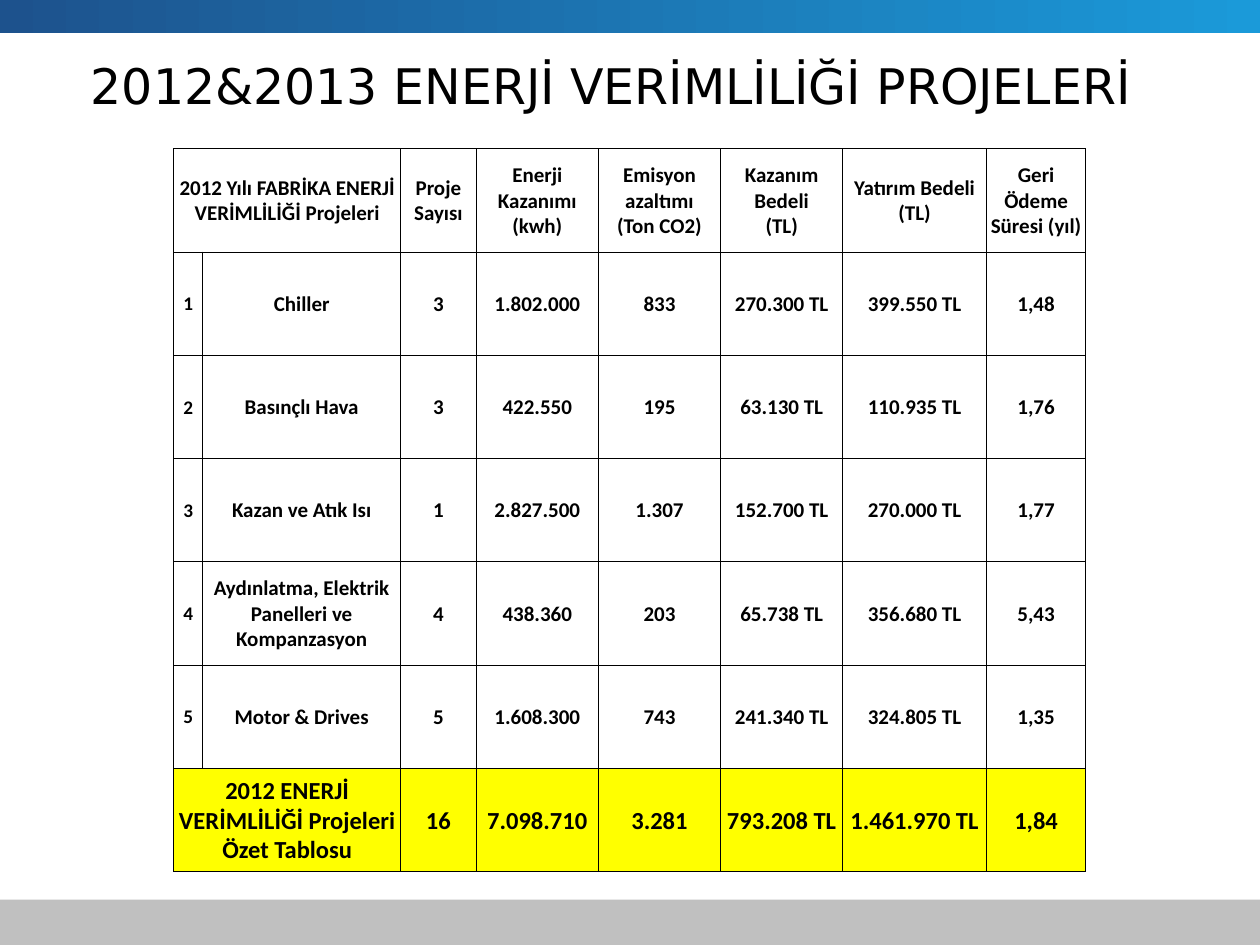
from lxml.etree import SubElement
from pptx import Presentation
from pptx.dml.color import RGBColor
from pptx.enum.shapes import MSO_SHAPE
from pptx.enum.text import MSO_ANCHOR, MSO_AUTO_SIZE, PP_ALIGN
from pptx.oxml.ns import qn
from pptx.util import Inches, Pt

TITLE = "2012&2013 ENERJİ VERİMLİLİĞİ PROJELERİ"
HEADER = ["2012 Yılı FABRİKA ENERJİ VERİMLİLİĞİ Projeleri", "", "Proje Sayısı",
          "Enerji Kazanımı (kwh)", "Emisyon\nazaltımı\n(Ton CO2)",
          "Kazanım\nBedeli\n(TL)", "Yatırım Bedeli\n(TL)",
          "Geri Ödeme Süresi (yıl)"]
PROJECTS = [
    ["1", "Chiller", "3", "1.802.000", "833", "270.300 TL", "399.550 TL", "1,48"],
    ["2", "Basınçlı Hava", "3", "422.550", "195", "63.130 TL", "110.935 TL", "1,76"],
    ["3", "Kazan ve Atık Isı", "1", "2.827.500", "1.307", "152.700 TL", "270.000 TL", "1,77"],
    ["4", "Aydınlatma, Elektrik Panelleri ve Kompanzasyon", "4", "438.360", "203",
     "65.738 TL", "356.680 TL", "5,43"],
    ["5", "Motor & Drives", "5", "1.608.300", "743", "241.340 TL", "324.805 TL", "1,35"],
]
TOTAL = ["2012 ENERJİ VERİMLİLİĞİ Projeleri Özet Tablosu", "", "16", "7.098.710",
         "3.281", "793.208 TL", "1.461.970 TL", "1,84"]
ROWS = [HEADER, *PROJECTS, TOTAL]
COL_WIDTHS = [0.23, 1.57, 0.6, 0.97, 0.97, 0.97, 1.14, 0.79]
ROW_HEIGHT = 0.82


def color(hex_value):
    return RGBColor.from_string(hex_value)


def add_run(p, text, size, font, bold=False):
    r = p.add_run()
    r.text = text
    r.font.size = Pt(size)
    r.font.name = font
    r.font.bold = bold
    r.font.color.rgb = color("000000")


def add_band(s, top, height):
    sp = s.shapes.add_shape(MSO_SHAPE.RECTANGLE, 0, Inches(top), Inches(10), Inches(height))
    sp.shadow.inherit = False
    sp.line.fill.background()
    return sp


def set_borders(cell, hex_value, width):
    tc_pr = cell._tc.get_or_add_tcPr()
    for side in ("lnL", "lnR", "lnT", "lnB"):
        ln = SubElement(tc_pr, qn(f"a:{side}"), w=str(Pt(width)))
        fill = SubElement(ln, qn("a:solidFill"))
        SubElement(fill, qn("a:srgbClr"), val=hex_value)


def format_cell(cell, text, size, fill):
    cell.margin_left = cell.margin_right = cell.margin_top = Inches(0.01)
    cell.margin_bottom = 0
    cell.vertical_anchor = MSO_ANCHOR.MIDDLE
    set_borders(cell, "000000", 0.5)
    if fill:
        cell.fill.solid()
        cell.fill.fore_color.rgb = color(fill)
    else:
        cell.fill.background()
    p = cell.text_frame.paragraphs[0]
    p.alignment = PP_ALIGN.CENTER
    if not text:
        return
    for i, line in enumerate(text.split("\n")):
        if i:
            p.add_line_break()
        add_run(p, line, size, "Calibri", bold=True)


prs = Presentation()
prs.slide_width, prs.slide_height = Inches(10), Inches(7.5)
s = prs.slides.add_slide(prs.slide_layouts[5])

footer = add_band(s, 7.14, 0.36)
footer.fill.solid()
footer.fill.fore_color.rgb = color("C0C0C0")
top_band = add_band(s, 0, 0.26)
top_band.fill.gradient()
top_band.fill.gradient_angle = 0
for stop, position, shade in zip(top_band.fill.gradient_stops, (0, 1), ("1D528D", "1B9AD9")):
    stop.position = position
    stop.color.rgb = color(shade)

title = s.shapes.title
title.left, title.top, title.width, title.height = map(Inches, (0.5, 0.35, 9.07, 0.64))
tf = title.text_frame
tf.auto_size = MSO_AUTO_SIZE.NONE
tf.vertical_anchor = MSO_ANCHOR.MIDDLE
tf.margin_left = Inches(0.22)
tf.paragraphs[0].alignment = PP_ALIGN.LEFT
add_run(tf.paragraphs[0], TITLE, 28, "DejaVu Sans")

table = s.shapes.add_table(
    len(ROWS), len(COL_WIDTHS), Inches(1.38), Inches(1.18),
    Inches(sum(COL_WIDTHS)), Inches(ROW_HEIGHT * len(ROWS))).table
table.first_row = table.horz_banding = False
for column, width in zip(table.columns, COL_WIDTHS):
    column.width = Inches(width)

last = len(ROWS) - 1
for i, values in enumerate(ROWS):
    table.rows[i].height = Inches(ROW_HEIGHT)
    for j, text in enumerate(values):
        if i == last:
            size = 14
        else:
            size = 11 if j == 0 and i > 0 else 12
        format_cell(table.cell(i, j), text, size, "FFFF00" if i == last else None)
for i in (0, last):
    table.cell(i, 0).merge(table.cell(i, 1))

prs.save("out.pptx")
